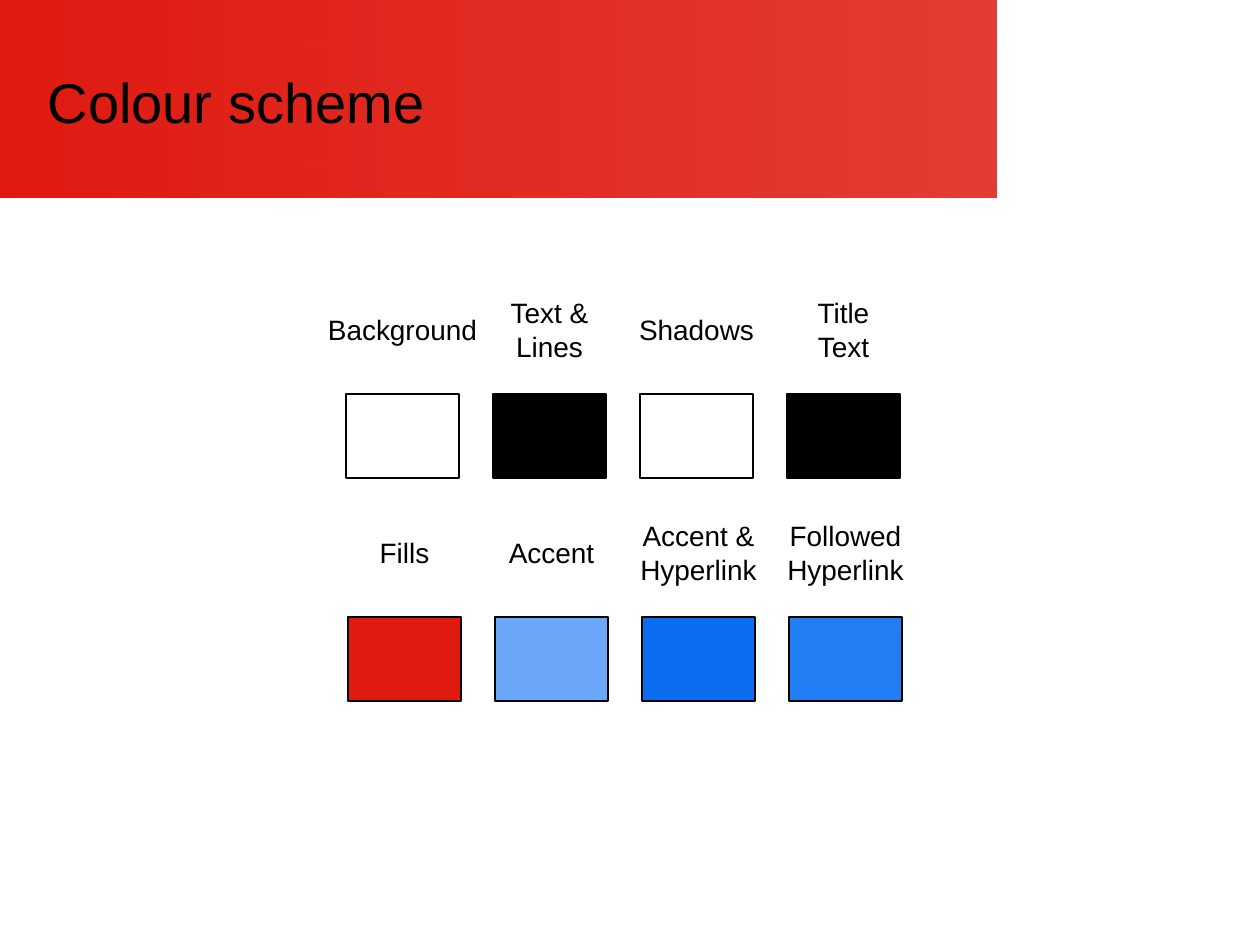
import lxml.etree
import pptx
import pptx.dml.color
import pptx.enum.shapes
import pptx.enum.text
import pptx.oxml.ns
import pptx.util

PX = 914400 / 126
FONT = "Arial"
BLACK = "000000"
RED = "E01A11"
SWATCH_WIDTH, SWATCH_HEIGHT = 113, 84
COLUMN_STEP = 147
LABEL_RISE = 64

ROWS = [
    (346, 394, [
        (["Background"], 178, "FFFFFF"),
        (["Text &", "Lines"], 108, BLACK),
        (["Shadows"], 144, "FFFFFF"),
        (["Title\vText"], 82, BLACK),
    ]),
    (348, 617, [
        (["Fills"], 80, RED),
        (["Accent"], 114, "6BA7F8"),
        (["Accent &", "Hyperlink"], 148, "0B6DEF"),
        (["Followed", "Hyperlink"], 148, "237DF5"),
    ]),
]


def px(length):
    return pptx.util.Emu(round(length * PX))


def colour(value):
    return pptx.dml.color.RGBColor.from_string(value)


def add_run(paragraph, text, size):
    run = paragraph.add_run()
    run.text = text
    run.font.name = FONT
    run.font.size = pptx.util.Pt(size)
    run.font.color.rgb = colour(BLACK)


def add_rectangle(slide, left, top, width, height):
    shape = slide.shapes.add_shape(
        pptx.enum.shapes.MSO_SHAPE.RECTANGLE, px(left), px(top), px(width), px(height))
    shape.shadow.inherit = False
    return shape


def add_title(slide, text):
    title = slide.shapes.title
    title.left, title.top, title.width, title.height = px(35), px(38), px(942), px(127)
    title.text_frame.vertical_anchor = pptx.enum.text.MSO_ANCHOR.MIDDLE
    paragraph = title.text_frame.paragraphs[0]
    paragraph.alignment = pptx.enum.text.PP_ALIGN.LEFT
    add_run(paragraph, text, 32)


def add_banner(slide):
    banner = add_rectangle(slide, 0, 0, 997, 198)
    banner.line.fill.background()
    banner.fill.gradient()
    banner.fill.gradient_angle = 0
    for stop in banner.fill.gradient_stops:
        stop.color.rgb = colour(RED)
    last_colour = banner.element.findall(".//" + pptx.oxml.ns.qn("a:srgbClr"))[-1]
    lxml.etree.SubElement(last_colour, pptx.oxml.ns.qn("a:alpha"), val="85000")
    slide.shapes.title.element.addprevious(banner.element)


def add_swatch(slide, left, top, fill):
    swatch = add_rectangle(slide, left, top, SWATCH_WIDTH, SWATCH_HEIGHT)
    swatch.fill.solid()
    swatch.fill.fore_color.rgb = colour(fill)
    swatch.line.color.rgb = colour(BLACK)
    swatch.line.width = pptx.util.Pt(0.75)


def add_label(slide, centre, middle, width, lines):
    line_count = sum(len(line.split("\v")) for line in lines)
    height = 13 + 34 * line_count
    box = slide.shapes.add_textbox(
        px(centre - width / 2), px(middle - height / 2), px(width), px(height))
    frame = box.text_frame
    frame.word_wrap = False
    frame.auto_size = pptx.enum.text.MSO_AUTO_SIZE.SHAPE_TO_FIT_TEXT
    for index, line in enumerate(lines):
        paragraph = frame.add_paragraph() if index else frame.paragraphs[0]
        paragraph.alignment = pptx.enum.text.PP_ALIGN.CENTER
        for part_index, part in enumerate(line.split("\v")):
            if part_index:
                paragraph.add_line_break()
            add_run(paragraph, part, 16)


def main():
    presentation = pptx.Presentation()
    presentation.slide_width, presentation.slide_height = px(1260), px(945)
    slide = presentation.slides.add_slide(presentation.slide_layouts[5])
    add_title(slide, "Colour scheme")
    add_banner(slide)
    for row_left, top, entries in ROWS:
        for column, (lines, width, fill) in enumerate(entries):
            left = row_left + column * COLUMN_STEP
            add_swatch(slide, left, top, fill)
            add_label(slide, left + SWATCH_WIDTH / 2, top - LABEL_RISE, width, lines)
    presentation.save("out.pptx")


if __name__ == "__main__":
    main()
